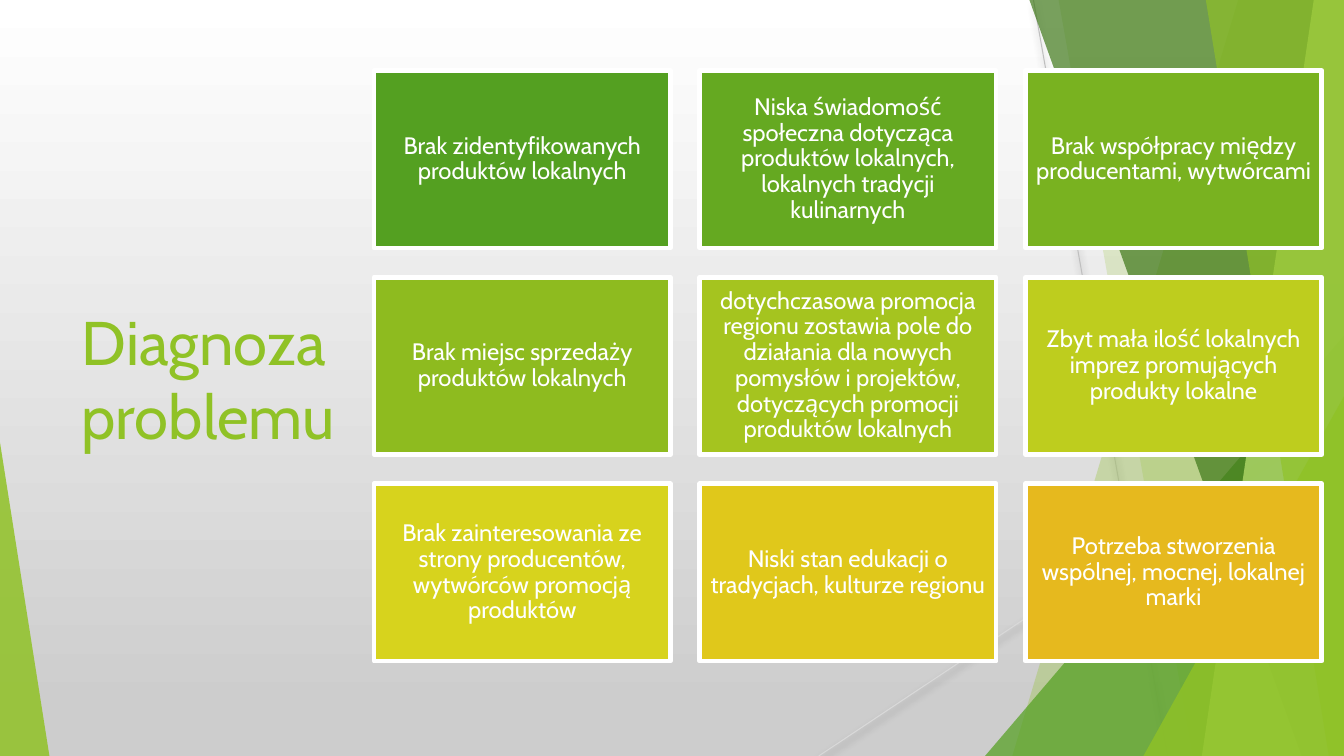
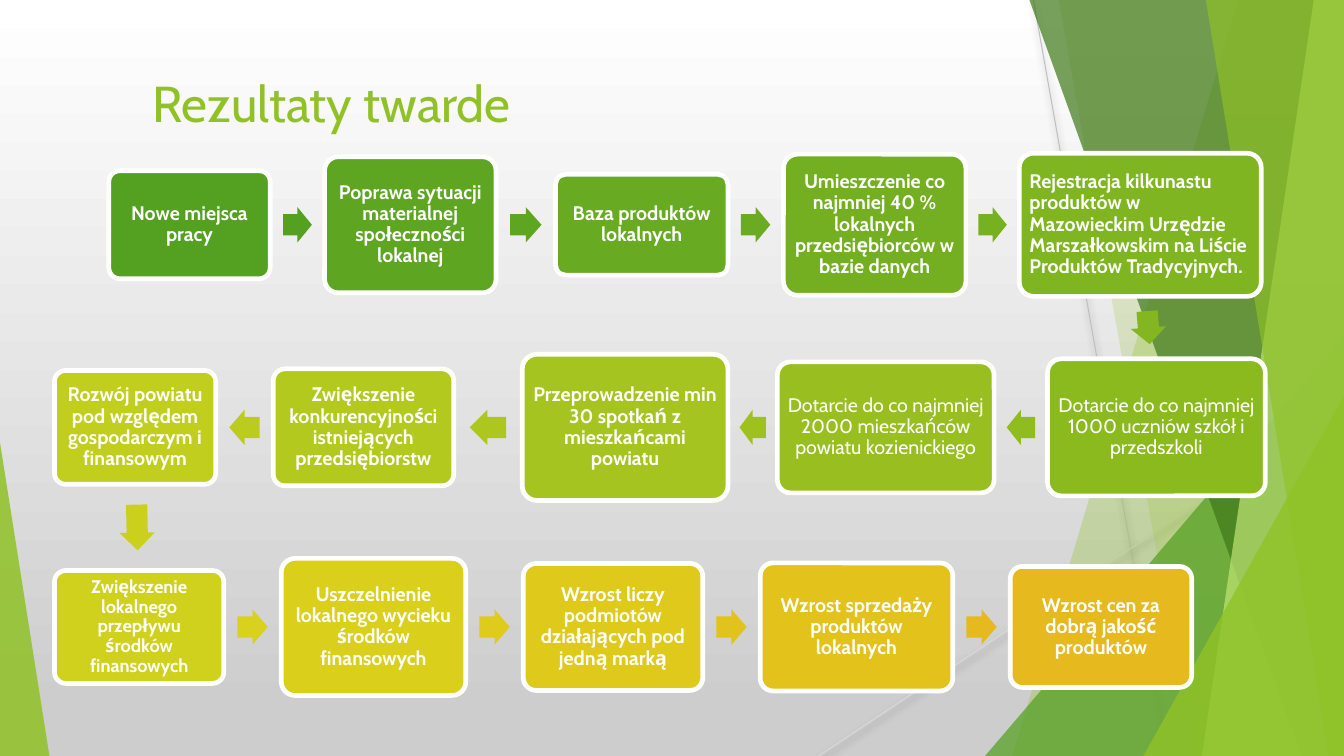
from dataclasses import dataclass
from itertools import pairwise
from math import atan2, copysign, degrees

from lxml import etree
from pptx import Presentation
from pptx.dml.color import RGBColor
from pptx.enum.shapes import MSO_CONNECTOR, MSO_SHAPE
from pptx.enum.text import MSO_ANCHOR, MSO_AUTO_SIZE, PP_ALIGN
from pptx.oxml.ns import qn
from pptx.shapes.autoshape import Shape
from pptx.slide import Slide, SlideLayout
from pptx.util import Inches, Pt

RECTANGLE = MSO_SHAPE.RECTANGLE
ROUNDED = MSO_SHAPE.ROUNDED_RECTANGLE
ARROW = MSO_SHAPE.RIGHT_ARROW
TRIANGLE = MSO_SHAPE.ISOSCELES_TRIANGLE
STRAIGHT = MSO_CONNECTOR.STRAIGHT
LEFT, CENTER = PP_ALIGN.LEFT, PP_ALIGN.CENTER
TOP, MIDDLE = MSO_ANCHOR.TOP, MSO_ANCHOR.MIDDLE
FIXED_SIZE = MSO_AUTO_SIZE.NONE

WIDTH, HEIGHT = 13.33, 7.5
TITLE_ONLY = 5


@dataclass(frozen=True)
class Theme:
    font: str = "Cabin"
    accent: str = "90C226"
    green: str = "54A021"
    dark: str = "3F7819"
    light: str = "C0E474"
    white: str = "FFFFFF"
    background_end: str = "CDCDCD"
    line_dark: str = "BFBFBF"
    line_light: str = "D9D9D9"
    scale: tuple[str, ...] = (
        "54A021", "65A921", "79B220", "8EBB1F", "A5C41F",
        "BECD1E", "D7D31D", "E0C81B", "E6B91E",
    )
    title_large: int = 44
    title_size: int = 36
    problem_size: int = 17
    result_size: int = 14
    small_size: int = 13
    outline: float = 3.35
    hairline: float = 0.75


THEME = Theme()


@dataclass(frozen=True)
class Box:
    left: float
    top: float
    width: float
    height: float

    @property
    def middle(self) -> tuple[float, float]:
        return self.left + self.width / 2, self.top + self.height / 2


@dataclass(frozen=True)
class Band:
    top_x: float
    bottom_x: float
    colour: str
    opacity: int


@dataclass(frozen=True)
class Wedge:
    box: Box
    apex: float
    colour: str
    opacity: int


@dataclass(frozen=True)
class Ray:
    start: tuple[float, float]
    end: tuple[float, float]
    colour: str


@dataclass(frozen=True)
class Result:
    text: str
    row: int
    left: float
    width: float
    height: float
    bold: bool = True
    alignment: PP_ALIGN = CENTER
    size: int = THEME.result_size

    @property
    def box(self) -> Box:
        return Box(self.left, ROW_MIDDLES[self.row] - self.height / 2, self.width, self.height)


RAYS = (
    Ray((10.25, 0), (11.58, HEIGHT), THEME.line_dark),
    Ray((WIDTH, 4.03), (8.12, HEIGHT), THEME.line_light),
)
DECORATIONS = (
    Band(12.28, 10.04, THEME.accent, 30),
    Band(10.5, 11.83, THEME.accent, 20),
    Wedge(Box(9.77, 3.33, 3.56, 4.17), 1, THEME.green, 72),
    Band(10.21, 12.91, THEME.dark, 70),
    Band(13.03, 11.92, THEME.light, 70),
    Band(11.96, 13.18, THEME.accent, 65),
    Wedge(Box(11.34, 3.93, 1.99, 3.57), 1, THEME.accent, 80),
    Wedge(Box(0, 4.39, 0.49, 3.11), 0, THEME.accent, 85),
)

PROBLEM_COLUMNS = 3
PROBLEM_CELL = Box(3.71, 0.7, 2.94, 1.76)
PROBLEM_GAP = 0.29
PROBLEMS = (
    "Brak zidentyfikowanych produktów lokalnych",
    "Niska świadomość społeczna dotycząca produktów lokalnych, lokalnych tradycji kulinarnych",
    "Brak współpracy między producentami, wytwórcami",
    "Brak miejsc sprzedaży produktów lokalnych",
    "dotychczasowa promocja regionu zostawia pole do działania dla nowych pomysłów i projektów, "
    "dotyczących promocji produktów lokalnych",
    "Zbyt mała ilość lokalnych imprez promujących produkty lokalne",
    "Brak zainteresowania ze strony producentów, wytwórców promocją produktów",
    "Niski stan edukacji o tradycjach, kulturze regionu",
    "Potrzeba stworzenia wspólnej, mocnej, lokalnej marki",
)

ROW_MIDDLES = (2.23, 4.24, 6.22)
ARROW_SHARE = 0.53
ARROW_HEIGHT = 0.35
RESULTS = (
    Result("Nowe miejsca pracy", 0, 1.08, 1.6, 1.07),
    Result("Poprawa sytuacji materialnej społeczności lokalnej", 0, 3.22, 1.7, 1.35),
    Result("Baza produktów lokalnych", 0, 5.51, 1.71, 1),
    Result("Umieszczenie co najmniej 40 % lokalnych przedsiębiorców w bazie danych",
           0, 7.77, 1.81, 1.4),
    Result("Rejestracja kilkunastu produktów w Mazowieckim Urzędzie Marszałkowskim "
           "na Liście Produktów Tradycyjnych.", 0, 10.11, 2.4, 1.42, alignment=LEFT),
    Result("Dotarcie do co najmniej 1000 uczniów szkół i przedszkoli",
           1, 10.39, 2.16, 1.36, bold=False),
    Result("Dotarcie do co najmniej 2000 mieszkańców powiatu kozienickiego",
           1, 7.71, 2.15, 1.3, bold=False),
    Result("Przeprowadzenie min 30 spotkań z mieszkańcami powiatu", 1, 5.18, 2.04, 1.45),
    Result("Zwiększenie konkurencyjności istniejących przedsiębiorstw", 1, 2.71, 1.79, 1.16),
    Result("Rozwój powiatu pod względem gospodarczym i finansowym", 1, 0.54, 1.6, 1.13),
    Result("Zwiększenie lokalnego przepływu środków finansowych",
           2, 0.54, 1.68, 1.12, size=THEME.small_size),
    Result("Uszczelnienie lokalnego wycieku środków finansowych", 2, 2.79, 1.83, 1.36),
    Result("Wzrost liczy podmiotów działających pod jedną marką", 2, 5.19, 1.78, 1.26),
    Result("Wzrost sprzedaży produktów lokalnych", 2, 7.54, 1.91, 1.27),
    Result("Wzrost cen za dobrą jakość produktów", 2, 10.02, 1.8, 1.2),
)


def scale_colour(share: float) -> str:
    position = share * (len(THEME.scale) - 1)
    index = min(int(position), len(THEME.scale) - 2)
    start, end = (RGBColor.from_string(code) for code in THEME.scale[index:index + 2])
    return str(RGBColor(*(round(a + (b - a) * (position - index)) for a, b in zip(start, end))))


def write_text(shape: Shape, text: str, *, size: int, colour: str = THEME.white,
               bold: bool = False, alignment: PP_ALIGN = CENTER, anchor: MSO_ANCHOR = MIDDLE,
               inset: float | None = None, line_spacing: float = 1.0) -> None:
    frame = shape.text_frame
    frame.text = text
    frame.word_wrap = True
    frame.auto_size = FIXED_SIZE
    frame.vertical_anchor = anchor
    if inset is not None:
        frame.margin_left = frame.margin_right = Inches(inset)
        frame.margin_top = frame.margin_bottom = Inches(inset)
    paragraph = frame.paragraphs[0]
    paragraph.alignment = alignment
    paragraph.line_spacing = line_spacing
    font = paragraph.runs[0].font
    font.name = THEME.font
    font.size = Pt(size)
    font.bold = bold
    font.color.rgb = RGBColor.from_string(colour)


def paint(shape: Shape, colour: str, *, opacity: int = 100, outline: str | None = None) -> None:
    shape.shadow.inherit = False
    shape.fill.solid()
    shape.fill.fore_color.rgb = RGBColor.from_string(colour)
    if opacity < 100:
        fill_colour = shape.element.spPr.find(f"{qn('a:solidFill')}/{qn('a:srgbClr')}")
        etree.SubElement(fill_colour, qn("a:alpha"), val=str(opacity * 1000))
    if outline:
        shape.line.color.rgb = RGBColor.from_string(outline)
        shape.line.width = Pt(THEME.outline)
    else:
        shape.line.fill.background()


def add_box(slide: Slide, kind: MSO_SHAPE, box: Box) -> Shape:
    lengths = (Inches(value) for value in (box.left, box.top, box.width, box.height))
    return slide.shapes.add_shape(kind, *lengths)


def add_ray(slide: Slide, ray: Ray) -> etree.ElementBase:
    points = (Inches(value) for value in (*ray.start, *ray.end))
    connector = slide.shapes.add_connector(STRAIGHT, *points)
    connector.line.color.rgb = RGBColor.from_string(ray.colour)
    connector.line.width = Pt(THEME.hairline)
    effects = etree.SubElement(connector.element.spPr, qn("a:effectLst"))
    shadow = etree.SubElement(effects, qn("a:outerShdw"), blurRad=str(Pt(5.2)),
                              dist=str(Pt(3)), dir="5400000", rotWithShape="0")
    black = etree.SubElement(shadow, qn("a:srgbClr"), val="000000")
    etree.SubElement(black, qn("a:alpha"), val="40000")
    return connector.element


def add_decoration(slide: Slide, item: Band | Wedge) -> etree.ElementBase:
    if isinstance(item, Wedge):
        shape = add_box(slide, TRIANGLE, item.box)
        shape.adjustments[0] = item.apex
    else:
        builder = slide.shapes.build_freeform(Inches(item.top_x), 0)
        corners = ((WIDTH, 0), (WIDTH, HEIGHT), (item.bottom_x, HEIGHT))
        builder.add_line_segments([(Inches(x), Inches(y)) for x, y in corners], close=True)
        shape = builder.convert_to_shape()
    paint(shape, item.colour, opacity=item.opacity)
    return shape.element


def decorate_layout(layout: SlideLayout, slide: Slide) -> None:
    fill = layout.background.fill
    fill.gradient()
    fill.gradient_angle = 270
    stops = ((0, THEME.white), (0.94, THEME.background_end))
    for stop, (position, colour) in zip(fill.gradient_stops, stops):
        stop.position = position
        stop.color.rgb = RGBColor.from_string(colour)
    elements = [add_ray(slide, ray) for ray in RAYS]
    elements += [add_decoration(slide, item) for item in DECORATIONS]
    layout.shapes.element.extend(elements)


def set_title(slide: Slide, text: str, box: Box, *, size: int, anchor: MSO_ANCHOR) -> None:
    title = slide.shapes.title
    title.left, title.top = Inches(box.left), Inches(box.top)
    title.width, title.height = Inches(box.width), Inches(box.height)
    write_text(title, text, size=size, colour=THEME.accent, alignment=LEFT, anchor=anchor)


def add_problems(slide: Slide) -> None:
    cell = PROBLEM_CELL
    for index, text in enumerate(PROBLEMS):
        row, column = divmod(index, PROBLEM_COLUMNS)
        box = Box(cell.left + column * (cell.width + PROBLEM_GAP),
                  cell.top + row * (cell.height + PROBLEM_GAP), cell.width, cell.height)
        shape = add_box(slide, RECTANGLE, box)
        paint(shape, THEME.scale[index], outline=THEME.white)
        write_text(shape, text, size=THEME.problem_size, inset=0.07, line_spacing=0.9)


def add_arrow(slide: Slide, start: Result, end: Result, colour: str) -> None:
    (start_x, start_y), (end_x, end_y) = start.box.middle, end.box.middle
    across, down = end_x - start_x, end_y - start_y
    x, y = (start_x + end_x) / 2, (start_y + end_y) / 2
    if start.row == end.row:
        gap = abs(across) - (start.width + end.width) / 2
        x += copysign(start.width - end.width, across) / 4 if start.width == end.width else (
            (start.width - end.width) / 4 * copysign(1, across))
    else:
        gap = down - (start.height + end.height) / 2
        y += (start.height - end.height) / 4
    length = gap * ARROW_SHARE
    arrow = add_box(slide, ARROW, Box(x - length / 2, y - ARROW_HEIGHT / 2, length, ARROW_HEIGHT))
    arrow.adjustments[0] = 0.6
    arrow.adjustments[1] = 0.5
    arrow.rotation = degrees(atan2(down, across))
    paint(arrow, colour)


def add_results(slide: Slide) -> None:
    last = len(RESULTS) - 1
    for index, result in enumerate(RESULTS):
        shape = add_box(slide, ROUNDED, result.box)
        shape.adjustments[0] = 0.1
        paint(shape, scale_colour(index / last), outline=THEME.white)
        write_text(shape, result.text, size=result.size, bold=result.bold,
                   alignment=result.alignment, inset=0.06, line_spacing=0.9)
    for index, (start, end) in enumerate(pairwise(RESULTS)):
        add_arrow(slide, start, end, scale_colour(index / (last - 1)))


def main() -> None:
    presentation = Presentation()
    presentation.slide_width, presentation.slide_height = Inches(WIDTH), Inches(HEIGHT)
    layout = presentation.slide_layouts[TITLE_ONLY]
    diagnosis, results = (presentation.slides.add_slide(layout) for _ in range(2))
    decorate_layout(layout, diagnosis)
    set_title(diagnosis, "Diagnoza problemu", Box(0.71, 1.51, 3.88, 4.48),
              size=THEME.title_large, anchor=MIDDLE)
    add_problems(diagnosis)
    set_title(results, "Rezultaty twarde", Box(1.41, 0.67, 11.15, 1.2),
              size=THEME.title_size, anchor=TOP)
    add_results(results)
    presentation.save("out.pptx")


if __name__ == "__main__":
    main()
